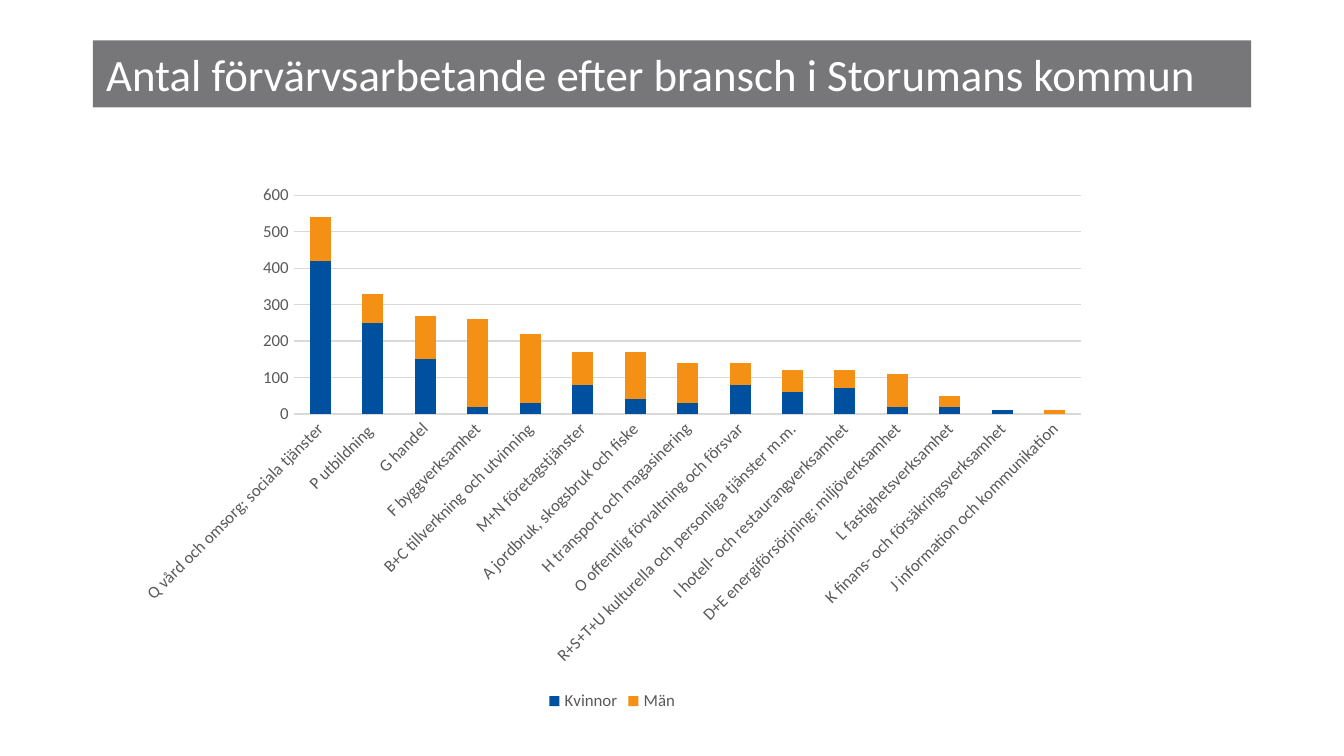
from dataclasses import dataclass

from pptx import Presentation
from pptx.chart.data import CategoryChartData
from pptx.dml.color import RGBColor
from pptx.enum.chart import XL_CHART_TYPE, XL_LEGEND_POSITION, XL_TICK_MARK
from pptx.enum.text import MSO_ANCHOR, MSO_AUTO_SIZE, PP_ALIGN
from pptx.oxml.ns import qn
from pptx.util import Inches, Pt


@dataclass(frozen=True)
class Theme:
    font: str = "Calibri"
    banner: str = "77777A"
    title: str = "FFFFFF"
    text: str = "000000"
    label: str = "595959"
    grid: str = "D9D9D9"
    women: str = "0050A0"
    men: str = "F49014"
    title_size: float = 24
    chart_size: float = 10
    label_size: float = 9
    line_width: float = 0.75


THEME = Theme()

INDUSTRIES = [
    ("Q vård och omsorg; sociala tjänster", 420, 120),
    ("P utbildning ", 250, 80),
    ("G handel", 150, 120),
    ("F byggverksamhet", 20, 240),
    ("B+C tillverkning och utvinning", 30, 190),
    ("M+N företagstjänster", 80, 90),
    ("A jordbruk, skogsbruk och fiske", 40, 130),
    ("H transport och magasinering", 30, 110),
    ("O offentlig förvaltning och försvar", 80, 60),
    ("R+S+T+U kulturella och personliga tjänster m.m.", 60, 60),
    ("I hotell- och restaurangverksamhet", 70, 50),
    ("D+E energiförsörjning; miljöverksamhet", 20, 90),
    ("L fastighetsverksamhet", 20, 30),
    ("K finans- och försäkringsverksamhet", 10, 0),
    ("J information och kommunikation", 0, 10),
]


def apply(target, **values):
    for name, value in values.items():
        setattr(target, name, value)


def style_font(font, size, color):
    apply(font, name=THEME.font, size=Pt(size), bold=False)
    font.color.rgb = RGBColor.from_string(color)


def style_line(line):
    line.width = Pt(THEME.line_width)
    line.color.rgb = RGBColor.from_string(THEME.grid)


def add_banner(s, text, left, top, width, height):
    sp = s.shapes.title
    apply(sp, left=Inches(left), top=Inches(top),
          width=Inches(width), height=Inches(height))
    sp.fill.solid()
    sp.fill.fore_color.rgb = RGBColor.from_string(THEME.banner)
    tf = sp.text_frame
    apply(tf, text=text, word_wrap=True, auto_size=MSO_AUTO_SIZE.NONE,
          vertical_anchor=MSO_ANCHOR.MIDDLE)
    p = tf.paragraphs[0]
    p.alignment = PP_ALIGN.LEFT
    style_font(p.runs[0].font, THEME.title_size, THEME.title)


def add_industry_chart(s, left, top, width, height):
    names, women, men = zip(*INDUSTRIES)
    data = CategoryChartData(number_format="0")
    data.categories = names
    data.add_series("Kvinnor", women)
    data.add_series("Män", men)
    chart = s.shapes.add_chart(
        XL_CHART_TYPE.COLUMN_STACKED, Inches(left), Inches(top),
        Inches(width), Inches(height), data).chart
    apply(chart, has_title=False, has_legend=True)
    style_font(chart.font, THEME.chart_size, THEME.text)

    plot = chart.plots[0]
    apply(plot, gap_width=150, overlap=100, vary_by_categories=False)
    for series, color in zip(plot.series, (THEME.women, THEME.men)):
        series.format.fill.solid()
        series.format.fill.fore_color.rgb = RGBColor.from_string(color)

    cat, val = chart.category_axis, chart.value_axis
    for axis in (cat, val):
        apply(axis, major_tick_mark=XL_TICK_MARK.NONE,
              minor_tick_mark=XL_TICK_MARK.NONE)
        style_font(axis.tick_labels.font, THEME.label_size, THEME.label)
    style_line(cat.format.line)
    cat._element.find(qn("c:txPr")).find(qn("a:bodyPr")).set("rot", "-2700000")
    apply(val, minimum_scale=0, maximum_scale=600, major_unit=100,
          has_major_gridlines=True)
    val.format.line.fill.background()
    style_line(val.major_gridlines.format.line)
    apply(val.tick_labels, number_format="0", number_format_is_linked=False)

    apply(chart.legend, position=XL_LEGEND_POSITION.BOTTOM,
          include_in_layout=False)
    style_font(chart.legend.font, THEME.label_size, THEME.label)


def main():
    prs = Presentation()
    width = Inches(10)
    apply(prs, slide_width=width, slide_height=width * 9 // 16)
    s = prs.slides.add_slide(prs.slide_layouts[5])
    add_banner(s, "Antal förvärvsarbetande efter bransch i Storumans kommun",
               0.69, 0.3, 8.62, 0.5)
    add_industry_chart(s, 0.92, 1.3, 7.27, 4.03)
    prs.save("out.pptx")


if __name__ == "__main__":
    main()
